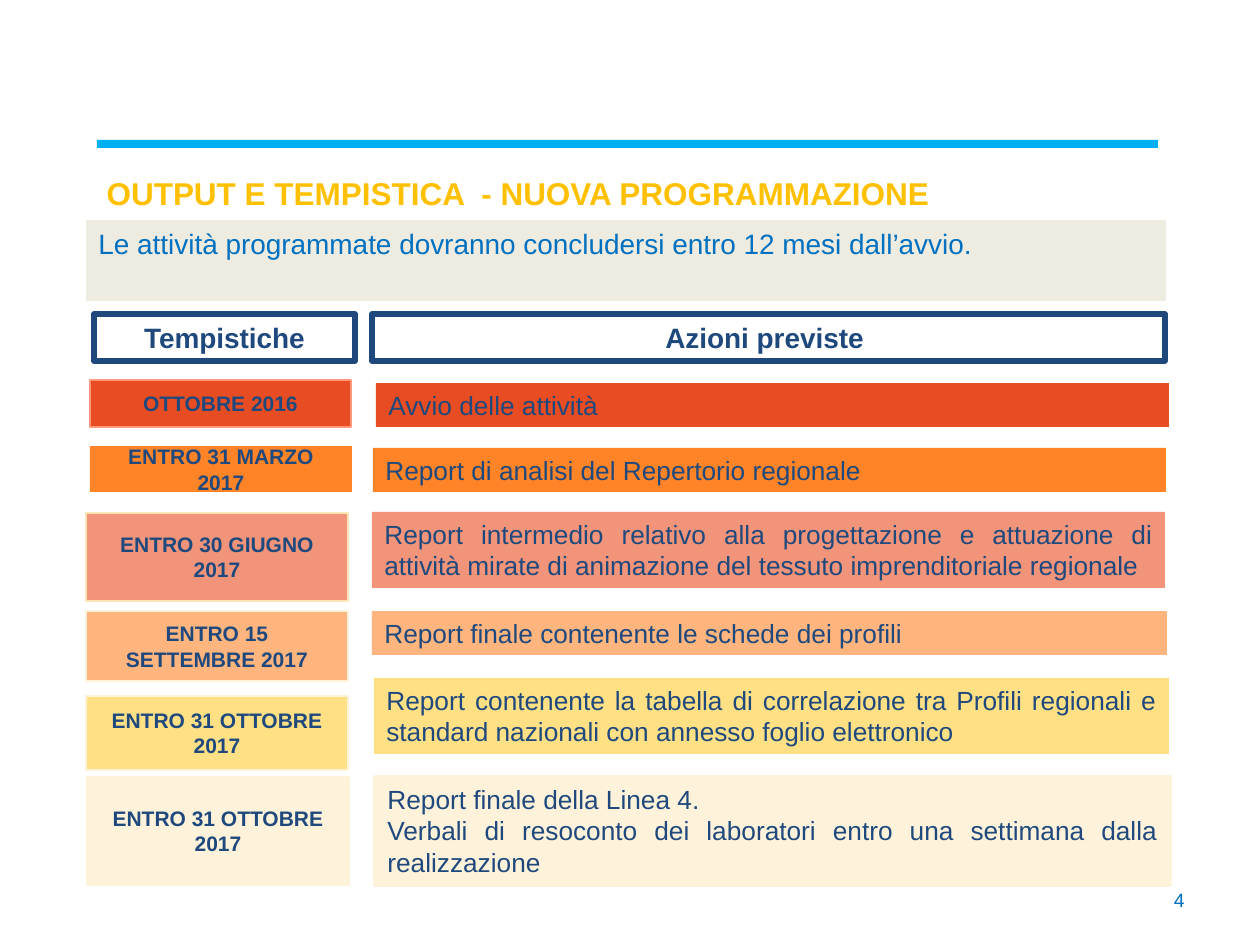
from pptx import Presentation
from pptx import util as u
from pptx.dml import color
from pptx.enum import shapes, text

SCALE = u.Inches(1) / 126
NAVY = "1F497D"
BLUE = "0070C0"
LEFT, CENTER = text.PP_ALIGN.LEFT, text.PP_ALIGN.CENTER
RIGHT, JUSTIFY = text.PP_ALIGN.RIGHT, text.PP_ALIGN.JUSTIFY
TOP, MIDDLE = text.MSO_ANCHOR.TOP, text.MSO_ANCHOR.MIDDLE

HEADINGS = [
    ("Tempistiche", (94, 314, 261, 47)),
    ("Azioni previste ", (372, 314, 793, 47)),
]

MILESTONES = [
    ("E84C22", "FF977A", "OTTOBRE 2016", (90, 380, 261, 47),
     ["Avvio delle attività"], (376, 383, 793, 44)),
    ("FF8427", None, "ENTRO 31 MARZO 2017", (90, 446, 262, 46),
     ["Report di analisi del Repertorio regionale"], (373, 448, 793, 44)),
    ("F1947A", "FFE5B5", "ENTRO 30 GIUGNO 2017", (86, 513, 262, 88),
     ["Report intermedio relativo alla progettazione e attuazione di attività "
      "mirate di animazione del tessuto imprenditoriale regionale"],
     (372, 512, 793, 76)),
    ("FFB57D", "FFF2DA", "ENTRO 15 SETTEMBRE 2017", (86, 611, 262, 70),
     ["Report finale contenente le schede dei profili"], (372, 611, 795, 44)),
    ("FFE085", "FFF2DA", "ENTRO 31 OTTOBRE 2017", (86, 696, 262, 74),
     ["Report contenente la tabella di correlazione tra Profili regionali e "
      "standard nazionali con annesso foglio elettronico"],
     (374, 678, 795, 76)),
    ("FFF2DA", "FFF2DA", "ENTRO 31 OTTOBRE 2017", (87, 777, 262, 108),
     ["Report finale della Linea 4.",
      "Verbali di resoconto dei laboratori entro una settimana dalla "
      "realizzazione"],
     (375, 777, 795, 108)),
]


def px(value):
    return u.Emu(round(value * SCALE))


def rgb(value):
    return color.RGBColor.from_string(value)


def write(shape, lines, size, hue, align, anchor=TOP, bold=False):
    frame = shape.text_frame
    frame.word_wrap = True
    frame.auto_size = text.MSO_AUTO_SIZE.NONE
    frame.vertical_anchor = anchor
    frame.text = "\n".join(lines)
    for paragraph in frame.paragraphs:
        paragraph.alignment = align
        paragraph.font.name = "Arial"
        paragraph.font.size = u.Pt(size)
        paragraph.font.bold = bold
        paragraph.font.color.rgb = rgb(hue)


def add_box(slide, box, fill, line=None, width=0.75):
    shape = slide.shapes.add_shape(shapes.MSO_SHAPE.RECTANGLE, *map(px, box))
    shape.shadow.inherit = False
    shape.fill.solid()
    shape.fill.fore_color.rgb = rgb(fill)
    if line:
        shape.line.color.rgb = rgb(line)
        shape.line.width = u.Pt(width)
    else:
        shape.line.fill.background()
    return shape


def add_title(slide, box, wording):
    title = slide.shapes.title
    title.left, title.top, title.width, title.height = map(px, box)
    write(title, [wording], 18, "FFC000", LEFT, bold=True)


def add_heading(slide, wording, box):
    shape = add_box(slide, box, "FFFFFF", NAVY, 3)
    write(shape, [wording], 16, NAVY, CENTER, MIDDLE, True)


def add_milestone(slide, fill, line, date, date_box, actions, action_box):
    date_shape = add_box(slide, date_box, fill, line)
    write(date_shape, [date], 12, NAVY, CENTER, MIDDLE, True)
    border = fill if len(actions) > 1 else None
    action_shape = add_box(slide, action_box, fill, border, 2.25)
    write(action_shape, actions, 15, NAVY, JUSTIFY)


def add_page_number(slide, box, number):
    shape = slide.shapes.add_textbox(*map(px, box))
    write(shape, [number], 11, BLUE, RIGHT)


def main():
    presentation = Presentation()
    presentation.slide_width, presentation.slide_height = px(1260), px(945)
    slide = presentation.slides.add_slide(presentation.slide_layouts[5])
    add_box(slide, (97, 140, 1061, 8), "00B0F0")
    add_title(slide, (94, 168, 1062, 50),
              "OUTPUT E TEMPISTICA  - NUOVA PROGRAMMAZIONE")
    intro = add_box(slide, (86, 220, 1080, 81), "EEECE1")
    write(intro, ["Le attività programmate dovranno concludersi entro 12 mesi "
                  "dall’avvio."], 16, BLUE, JUSTIFY)
    for heading in HEADINGS:
        add_heading(slide, *heading)
    for milestone in MILESTONES:
        add_milestone(slide, *milestone)
    add_page_number(slide, (903, 882, 294, 66), "4")
    presentation.save("out.pptx")


if __name__ == "__main__":
    main()
